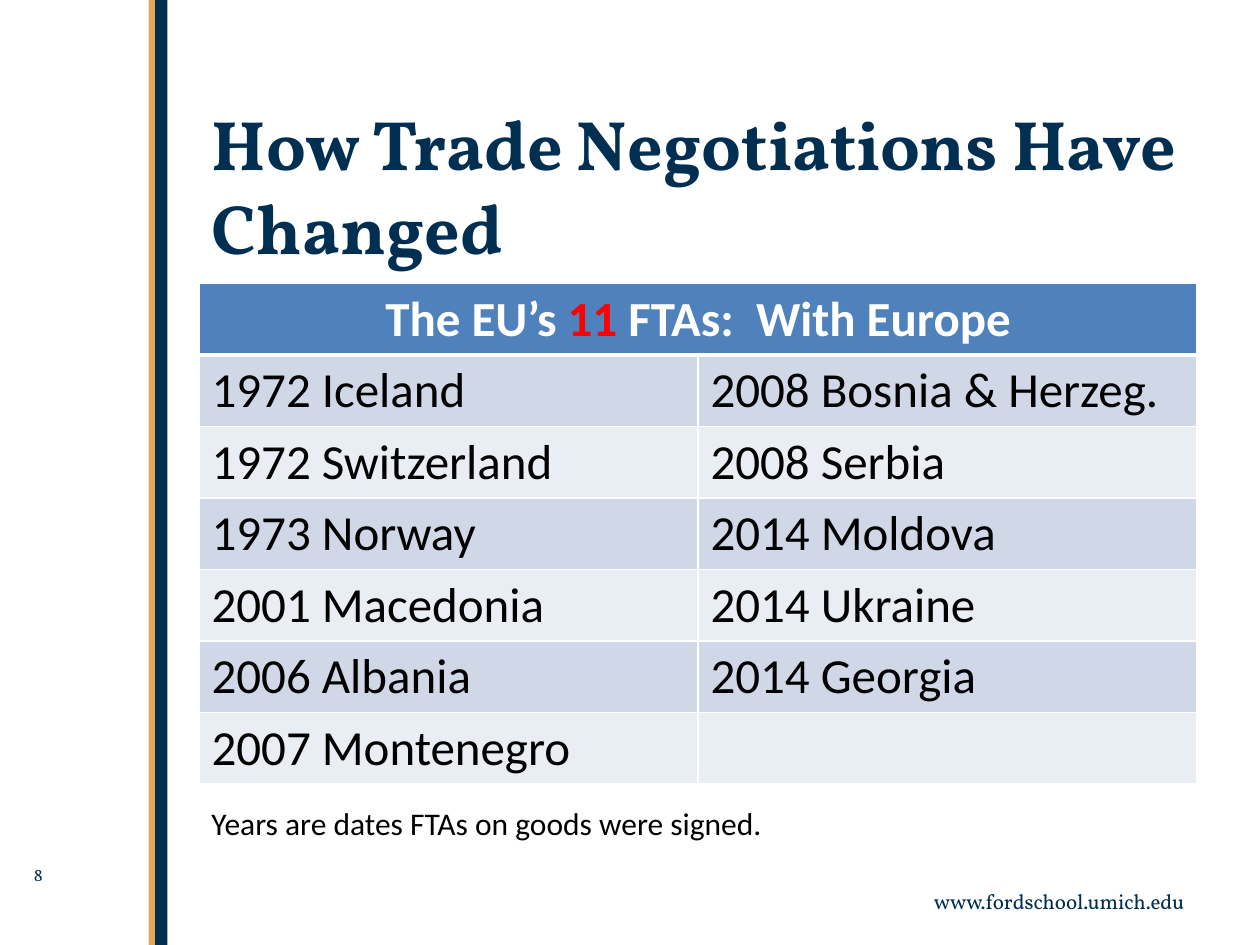
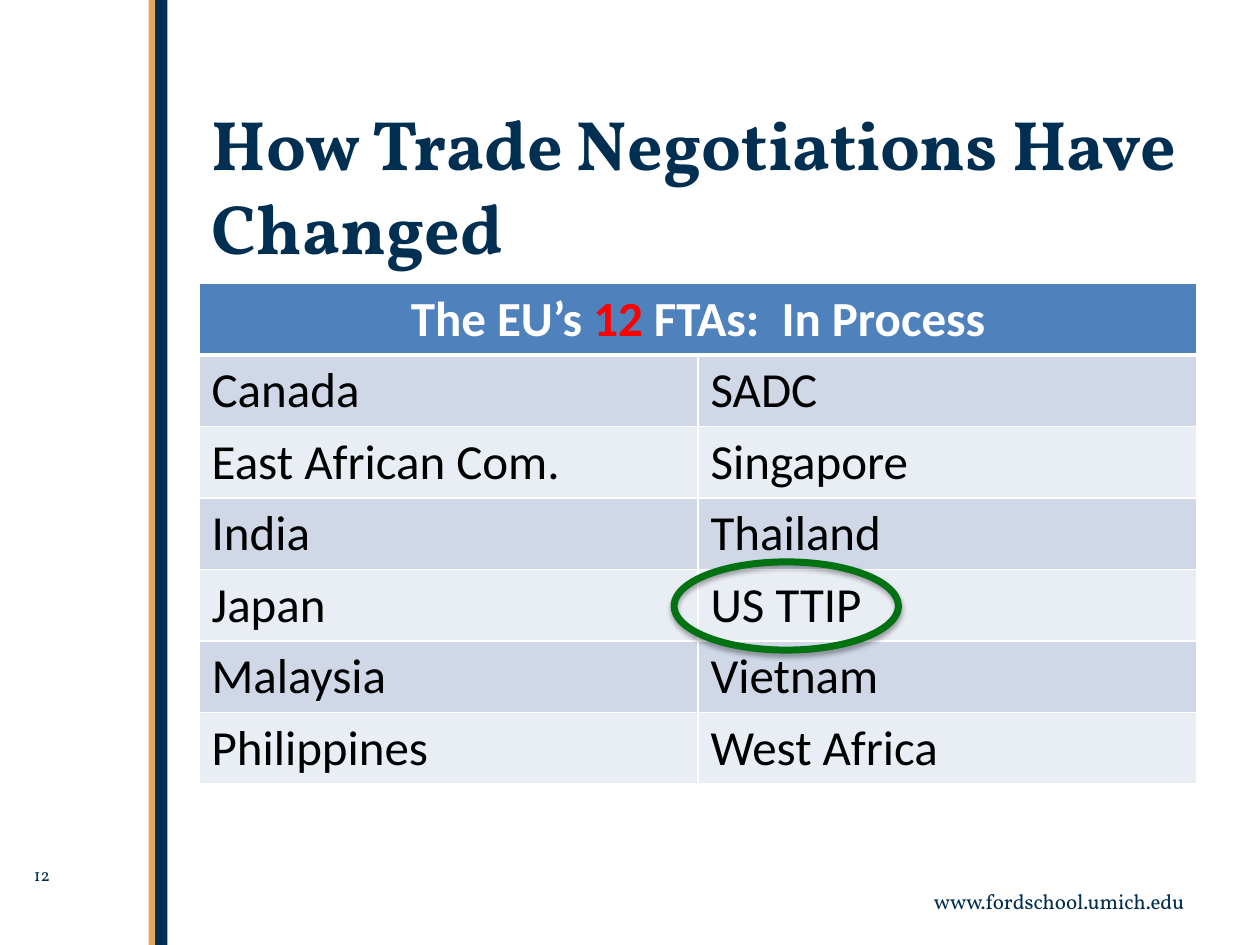
"""Build two slides with tables of the EU's free trade agreements."""
from dataclasses import dataclass

import lxml.etree
import pptx
import pptx.dml.color
import pptx.enum.shapes
import pptx.enum.text
import pptx.oxml.ns
import pptx.presentation
import pptx.slide
import pptx.table
import pptx.text.text
import pptx.util

Inches = pptx.util.Inches
Pt = pptx.util.Pt
qn = pptx.oxml.ns.qn
Align = pptx.enum.text.PP_ALIGN
ShapeType = pptx.enum.shapes.MSO_SHAPE

COLORS = {
    "navy": "002F52",
    "gold": "E3A856",
    "header": "4F81BD",
    "band_dark": "D0D8E8",
    "band_light": "E9EDF4",
    "white": "FFFFFF",
    "black": "000000",
    "red": "FF0000",
    "green": "007212",
}
HEADING_FONT = "Vollkorn"
BODY_FONT = "Calibri"
TITLE = "How Trade Negotiations Have Changed"
WEBSITE = "www.fordschool.umich.edu"
SLIDE_WIDTH, SLIDE_HEIGHT = 10, 7.5
CONTENT_LEFT, CONTENT_WIDTH = 1.58, 7.92
TABLE_TOP, TABLE_HEIGHT = 2.25, 3.97


@dataclass(frozen=True)
class Box:
    left: float
    top: float
    width: float
    height: float

    def lengths(self) -> tuple[int, ...]:
        return tuple(Inches(value) for value in (self.left, self.top, self.width, self.height))


@dataclass(frozen=True)
class TextStyle:
    font: str
    size: int
    color: str
    bold: bool = False


@dataclass(frozen=True)
class Band:
    box: Box
    color: str


@dataclass(frozen=True)
class AgreementSlide:
    number: int
    count: int
    group: str
    left_column: list[str]
    right_column: list[str]
    note: str = ""
    highlight: Box | None = None


TITLE_STYLE = TextStyle(HEADING_FONT, 40, "navy", True)
WEBSITE_STYLE = TextStyle(HEADING_FONT, 12, "navy")
NUMBER_STYLE = TextStyle(HEADING_FONT, 10, "navy")
NOTE_STYLE = TextStyle(BODY_FONT, 18, "black")
CELL_STYLE = TextStyle(BODY_FONT, 28, "black")
HEADER_STYLE = TextStyle(BODY_FONT, 28, "white", True)
COUNT_STYLE = TextStyle(BODY_FONT, 28, "red", True)

BANDS = [
    Band(Box(1.23, 0, 0.1, SLIDE_HEIGHT), "navy"),
    Band(Box(1.18, 0, 0.05, SLIDE_HEIGHT), "gold"),
]

SLIDES = [
    AgreementSlide(
        number=8,
        count=11,
        group="With Europe",
        left_column=["1972 Iceland", "1972 Switzerland", "1973 Norway",
                     "2001 Macedonia", "2006 Albania", "2007 Montenegro"],
        right_column=["2008 Bosnia & Herzeg.", "2008 Serbia", "2014 Moldova",
                      "2014 Ukraine", "2014 Georgia", ""],
        note="Years are dates FTAs on goods were signed.",
    ),
    AgreementSlide(
        number=12,
        count=12,
        group="In Process",
        left_column=["Canada", "East African Com.", "India",
                     "Japan", "Malaysia", "Philippines"],
        right_column=["SADC", "Singapore", "Thailand",
                      "US TTIP", "Vietnam", "West Africa"],
        highlight=Box(5.35, 4.46, 1.78, 0.7),
    ),
]


def rgb(color: str) -> pptx.dml.color.RGBColor:
    return pptx.dml.color.RGBColor.from_string(COLORS[color])


def add_run(paragraph: pptx.text.text._Paragraph, text: str, style: TextStyle) -> None:
    run = paragraph.add_run()
    run.text = text
    run.font.name = style.font
    run.font.size = Pt(style.size)
    run.font.bold = style.bold
    run.font.color.rgb = rgb(style.color)


def add_text(slide: pptx.slide.Slide, box: Box, text: str, style: TextStyle,
             alignment: Align = Align.LEFT) -> None:
    text_frame = slide.shapes.add_textbox(*box.lengths()).text_frame
    text_frame.word_wrap = True
    paragraph = text_frame.paragraphs[0]
    paragraph.alignment = alignment
    add_run(paragraph, text, style)


def add_frame(slide: pptx.slide.Slide, number: int) -> None:
    for band in BANDS:
        shape = slide.shapes.add_shape(ShapeType.RECTANGLE, *band.box.lengths())
        shape.shadow.inherit = False
        shape.fill.solid()
        shape.fill.fore_color.rgb = rgb(band.color)
        shape.line.fill.background()
    add_text(slide, Box(7, 7, 2.5, 0.3), WEBSITE, WEBSITE_STYLE, Align.RIGHT)
    add_text(slide, Box(0.17, 6.81, 0.92, 0.34), str(number), NUMBER_STYLE)


def format_title(slide: pptx.slide.Slide) -> None:
    title = slide.shapes.title
    title.left, title.top, title.width, title.height = Box(
        CONTENT_LEFT, 0.75, CONTENT_WIDTH, 1.23).lengths()
    text_frame = title.text_frame
    text_frame.auto_size = pptx.enum.text.MSO_AUTO_SIZE.NONE
    text_frame.vertical_anchor = pptx.enum.text.MSO_ANCHOR.TOP
    text_frame.word_wrap = True
    paragraph = text_frame.paragraphs[0]
    paragraph.alignment = Align.LEFT
    add_run(paragraph, TITLE, TITLE_STYLE)


def add_color(parent: lxml.etree._Element, color: str) -> lxml.etree._Element:
    return lxml.etree.SubElement(parent, qn("a:srgbClr"), val=COLORS[color])


def format_cell(cell: pptx.table._Cell, fill: str, top: int = 1, bottom: int = 1) -> None:
    properties = cell._tc.get_or_add_tcPr()
    for side, width in (("L", 1), ("R", 1), ("T", top), ("B", bottom)):
        border = lxml.etree.SubElement(properties, qn(f"a:ln{side}"), w=str(Pt(width)))
        add_color(lxml.etree.SubElement(border, qn("a:solidFill")), "white")
    cell.fill.solid()
    cell.fill.fore_color.rgb = rgb(fill)


def add_agreement_table(slide: pptx.slide.Slide, content: AgreementSlide) -> None:
    rows = list(zip(content.left_column, content.right_column))
    box = Box(CONTENT_LEFT, TABLE_TOP, CONTENT_WIDTH, TABLE_HEIGHT)
    table = slide.shapes.add_table(len(rows) + 1, 2, *box.lengths()).table
    for column in range(2):
        format_cell(table.cell(0, column), "header", bottom=3)
    header = table.cell(0, 0)
    header.merge(table.cell(0, 1))
    paragraph = header.text_frame.paragraphs[0]
    paragraph.alignment = Align.CENTER
    add_run(paragraph, "The EU’s ", HEADER_STYLE)
    add_run(paragraph, str(content.count), COUNT_STYLE)
    add_run(paragraph, f" FTAs:  {content.group}", HEADER_STYLE)
    for row, partners in enumerate(rows, start=1):
        for column, partner in enumerate(partners):
            cell = table.cell(row, column)
            format_cell(cell, "band_dark" if row % 2 else "band_light", top=3 if row == 1 else 1)
            if partner:
                add_run(cell.text_frame.paragraphs[0], partner, CELL_STYLE)


def add_highlight(slide: pptx.slide.Slide, box: Box) -> None:
    ellipse = slide.shapes.add_shape(ShapeType.OVAL, *box.lengths())
    ellipse.fill.background()
    ellipse.line.color.rgb = rgb("green")
    ellipse.line.width = Pt(4)
    ellipse.shadow.inherit = False
    effects = ellipse._element.spPr.find(qn("a:effectLst"))
    shadow = lxml.etree.SubElement(
        effects, qn("a:outerShdw"), blurRad=str(Pt(3.1)), dist=str(Pt(1.8)),
        dir="5400000", rotWithShape="0")
    lxml.etree.SubElement(add_color(shadow, "black"), qn("a:alpha"), val="35000")


def add_agreement_slide(presentation: pptx.presentation.Presentation,
                        content: AgreementSlide) -> None:
    slide = presentation.slides.add_slide(presentation.slide_layouts.get_by_name("Title Only"))
    add_frame(slide, content.number)
    format_title(slide)
    add_agreement_table(slide, content)
    if content.note:
        add_text(slide, Box(CONTENT_LEFT, 6.33, 6.75, 0.4), content.note, NOTE_STYLE)
    if content.highlight:
        add_highlight(slide, content.highlight)


def main() -> None:
    presentation = pptx.Presentation()
    presentation.slide_width = Inches(SLIDE_WIDTH)
    presentation.slide_height = Inches(SLIDE_HEIGHT)
    for content in SLIDES:
        add_agreement_slide(presentation, content)
    presentation.save("out.pptx")


if __name__ == "__main__":
    main()
